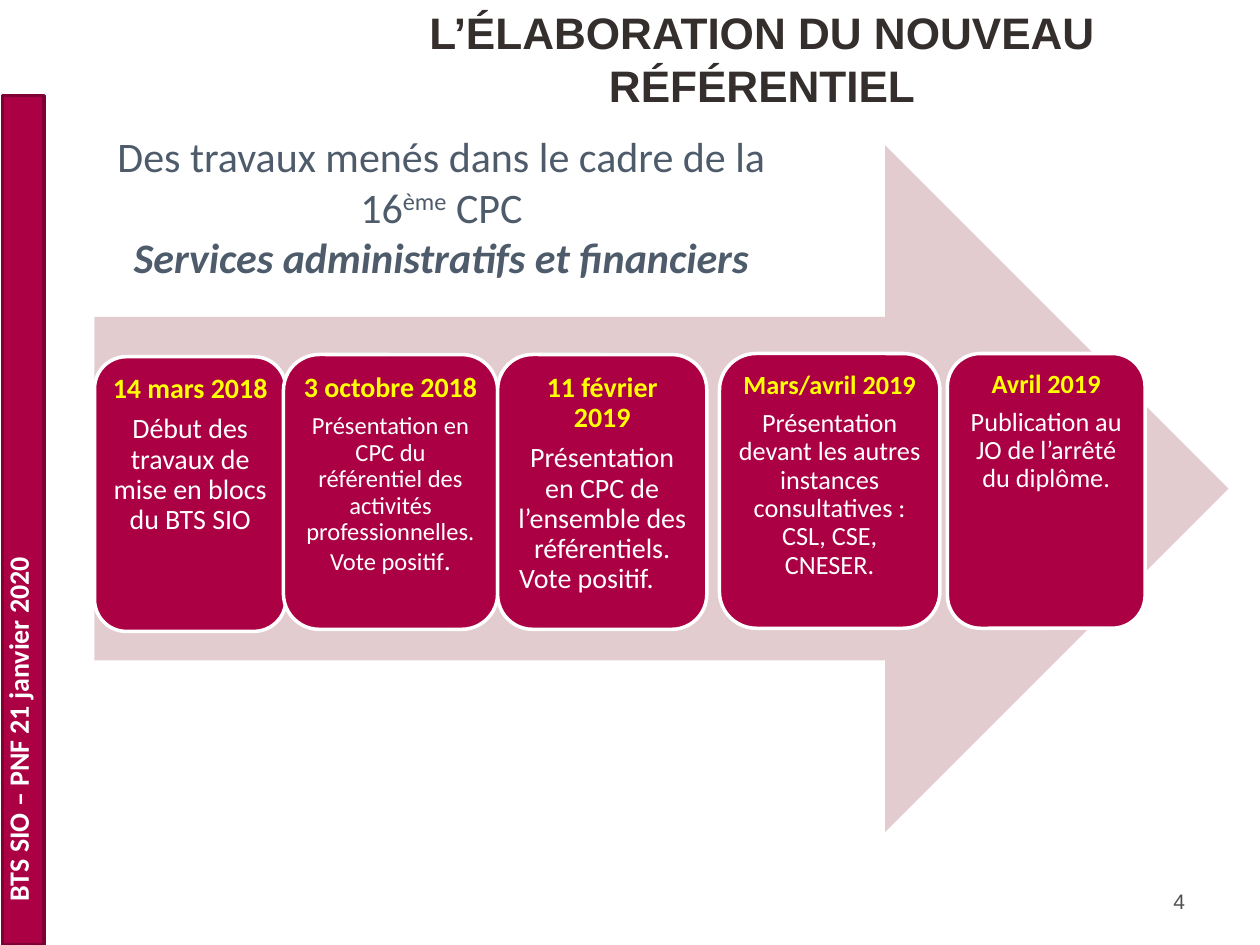
from dataclasses import dataclass

from pptx import Presentation
from pptx.dml.color import RGBColor
from pptx.enum.shapes import MSO_SHAPE
from pptx.enum.text import MSO_ANCHOR, PP_ALIGN
from pptx.shapes.autoshape import Shape
from pptx.slide import Slide
from pptx.text.text import TextFrame, _Paragraph
from pptx.util import Pt

RECTANGLE = MSO_SHAPE.RECTANGLE
ROUNDED = MSO_SHAPE.ROUNDED_RECTANGLE
ARROW = MSO_SHAPE.RIGHT_ARROW
LEFT, CENTER, RIGHT = PP_ALIGN.LEFT, PP_ALIGN.CENTER, PP_ALIGN.RIGHT
TOP, MIDDLE = MSO_ANCHOR.TOP, MSO_ANCHOR.MIDDLE


@dataclass(frozen=True)
class Theme:
    crimson: str = "AB0044"
    dark_crimson: str = "7F0032"
    pink: str = "E2CCCF"
    white: str = "FFFFFF"
    yellow: str = "FFFF00"
    title_ink: str = "342E2C"
    subtitle_ink: str = "4D5B6B"
    number_ink: str = "544F4F"
    heading_font: str = "Arial"
    body_font: str = "Calibri"
    title_size: float = 25.2
    subtitle_size: float = 24
    label_size: float = 16
    number_size: float = 12


@dataclass(frozen=True)
class Frame:
    left: float
    top: float
    width: float
    height: float


@dataclass(frozen=True)
class Style:
    font: str
    size: float
    color: str
    bold: bool = False
    italic: bool = False
    baseline: int = 0


@dataclass(frozen=True)
class Milestone:
    left: float
    top: float
    width: float
    inset: float
    date: str
    date_size: float
    text: str
    text_size: float
    ending: str = ""
    closing_line: str = ""


THEME = Theme()
CARD_HEIGHT = 157
CARD_LINE_SPACING = 0.9
CARD_GAP_RATIO = 0.35
CLOSING_LINE_INDENT = 18

MILESTONES = [
    Milestone(54, 203.8, 109.4, 5, "14 mars 2018", 16,
              "Début des travaux de mise en blocs du BTS SIO", 16),
    Milestone(162, 202.6, 122.4, 5, "3 octobre 2018", 16,
              "Présentation en CPC du référentiel des activités "
              "professionnelles. Vote positif", 14, ending="."),
    Milestone(284.4, 202.6, 119.5, 5, "11 février 2019", 16,
              "Présentation en CPC de l’ensemble des référentiels.", 16,
              closing_line="Vote positif."),
    Milestone(411.1, 202, 126, 4.5, "Mars/avril 2019", 15,
              "Présentation devant les autres instances consultatives : "
              "CSL, CSE, CNESER.", 15),
    Milestone(541.4, 202, 113, 4.5, "Avril 2019", 15,
              "Publication au JO de l’arrêté du diplôme.", 15),
]


def add_run(para: _Paragraph, text: str, style: Style) -> None:
    span = para.add_run()
    span.text = text
    span.font.name = style.font
    span.font.size = Pt(style.size)
    span.font.bold = style.bold
    span.font.italic = style.italic
    span.font.color.rgb = RGBColor.from_string(style.color)
    if style.baseline:
        span._r.get_or_add_rPr().set("baseline", str(style.baseline * 1000))


def add_text(slide: Slide, frame: Frame, lines: list[list[tuple[str, Style]]],
             align: PP_ALIGN, anchor: MSO_ANCHOR = TOP) -> TextFrame:
    """Add a text box; each line is one paragraph made of styled runs."""
    box = slide.shapes.add_textbox(Pt(frame.left), Pt(frame.top),
                                   Pt(frame.width), Pt(frame.height))
    body = box.text_frame
    body.word_wrap = True
    body.vertical_anchor = anchor
    for index, line in enumerate(lines):
        para = body.add_paragraph() if index else body.paragraphs[0]
        para.alignment = align
        for text, style in line:
            add_run(para, text, style)
    return body


def add_block(slide: Slide, kind: MSO_SHAPE, frame: Frame, fill: str,
              line: str | None = None) -> Shape:
    block = slide.shapes.add_shape(kind, Pt(frame.left), Pt(frame.top),
                                   Pt(frame.width), Pt(frame.height))
    block.shadow.inherit = False
    block.fill.solid()
    block.fill.fore_color.rgb = RGBColor.from_string(fill)
    if line:
        block.line.color.rgb = RGBColor.from_string(line)
        block.line.width = Pt(2)
    else:
        block.line.fill.background()
    return block


def format_card_line(para: _Paragraph, gap: float) -> None:
    para.alignment = CENTER
    para.line_spacing = CARD_LINE_SPACING
    para.space_after = Pt(gap)


def add_milestone(slide: Slide, item: Milestone) -> None:
    frame = Frame(item.left, item.top, item.width, CARD_HEIGHT)
    body = add_block(slide, ROUNDED, frame, THEME.crimson, THEME.white).text_frame
    body.word_wrap = True
    body.vertical_anchor = TOP
    body.margin_left = body.margin_right = Pt(item.inset)
    body.margin_top = body.margin_bottom = Pt(item.inset)

    date_para = body.paragraphs[0]
    format_card_line(date_para, item.date_size * CARD_GAP_RATIO)
    add_run(date_para, item.date,
            Style(THEME.body_font, item.date_size, THEME.yellow, bold=True))

    text_style = Style(THEME.body_font, item.text_size, THEME.white)
    text_para = body.add_paragraph()
    format_card_line(text_para, 0)
    add_run(text_para, item.text, text_style)
    if item.ending:
        add_run(text_para, item.ending,
                Style(THEME.body_font, item.date_size, THEME.white))
    if item.closing_line:
        closing_para = body.add_paragraph()
        format_card_line(closing_para, 0)
        closing_para._p.get_or_add_pPr().set("marR", str(Pt(CLOSING_LINE_INDENT)))
        add_run(closing_para, item.closing_line, text_style)


def add_side_banner(slide: Slide) -> None:
    add_block(slide, RECTANGLE, Frame(1.4, 54.7, 23.8, 485.3),
              THEME.crimson, THEME.dark_crimson)
    label = Style(THEME.body_font, THEME.label_size, THEME.white, bold=True)
    body = add_text(slide, Frame(-3, 25.2, 34, 496.8),
                    [[("BTS SIO – PNF 21 janvier 2020", label)]], LEFT)
    body._txBody.bodyPr.set("vert", "vert270")


def main() -> None:
    deck = Presentation()
    deck.slide_width, deck.slide_height = Pt(720), Pt(540)
    page = deck.slides.add_slide(deck.slide_layouts[6])

    add_side_banner(page)
    title = Style(THEME.heading_font, THEME.title_size, THEME.title_ink, bold=True)
    add_text(page, Frame(150.5, 0, 570, 66.2),
             [[("L’ÉLABORATION DU NOUVEAU RÉFÉRENTIEL", title)]], CENTER, MIDDLE)

    add_block(page, ARROW, Frame(54, 83, 648, 392.4), THEME.pink)
    for item in MILESTONES:
        add_milestone(page, item)

    base = (THEME.body_font, THEME.subtitle_size, THEME.subtitle_ink)
    add_text(page, Frame(48.2, 71.3, 408.2, 94.3), [
        [("Des travaux menés dans le cadre de la 16", Style(*base)),
         ("ème", Style(*base, baseline=30)), (" CPC", Style(*base))],
        [("Services administratifs et financiers",
          Style(*base, bold=True, italic=True))],
    ], CENTER)

    number = Style(THEME.heading_font, THEME.number_size, THEME.number_ink)
    add_text(page, Frame(516.2, 500.4, 168, 28.8), [[("4", number)]], RIGHT, MIDDLE)
    deck.save("out.pptx")


if __name__ == "__main__":
    main()
